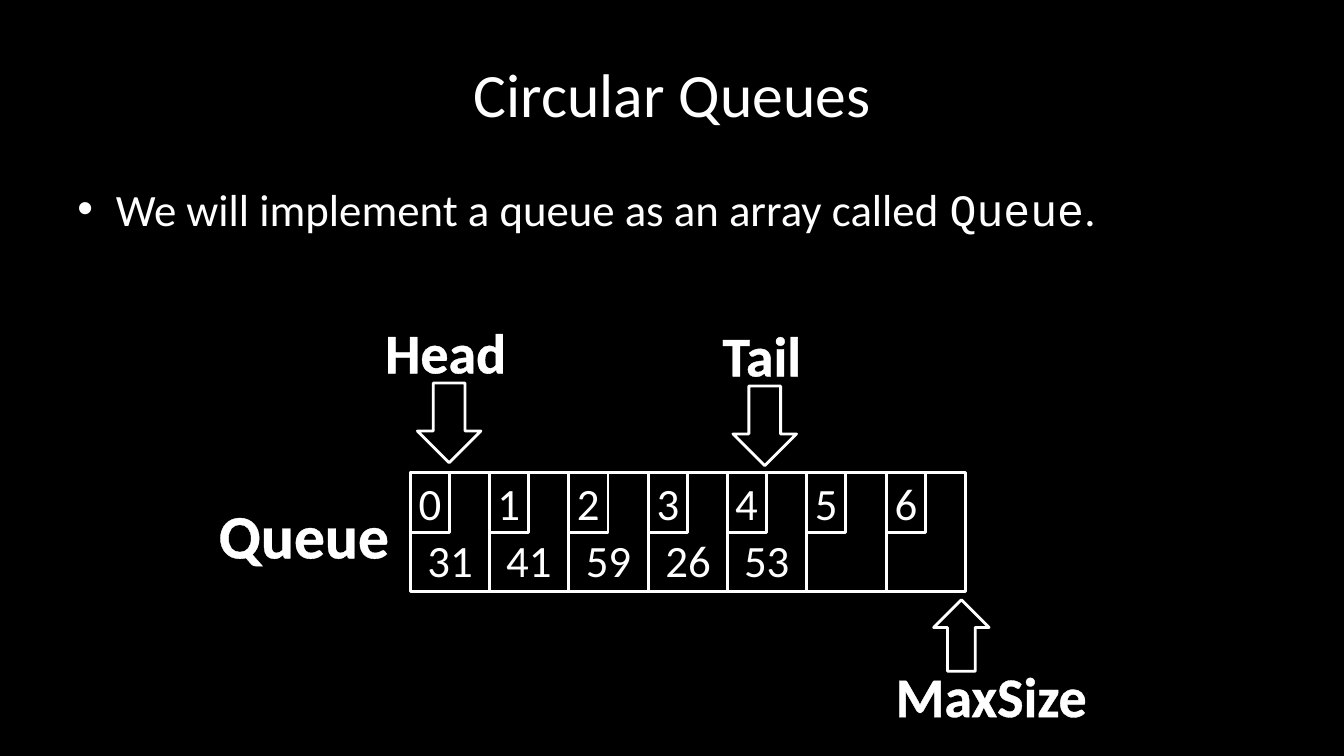
import pptx
import pptx.dml.color
import pptx.enum.shapes
import pptx.enum.text
import pptx.oxml
import pptx.oxml.ns
import pptx.util

PX = 9144
COLORS = {"background": "000000", "ink": "FFFFFF"}
SHAPE = pptx.enum.shapes.MSO_SHAPE
ANCHOR = pptx.enum.text.MSO_ANCHOR
ALIGN = pptx.enum.text.PP_ALIGN
NS = pptx.oxml.ns.nsdecls("a")

VALUES = ["31", "41", "59", "26", "53", "", ""]
ROW_LEFT, ROW_TOP, ROW_WIDTH = 407, 469, 551
CELL_WIDTH, CELL_HEIGHT = 79, 118
INDEX_WIDTH, INDEX_HEIGHT = 39, 59


def rgb(name):
    return pptx.dml.color.RGBColor.from_string(COLORS[name])


def px(*lengths):
    return [pptx.util.Emu(n * PX) for n in lengths]


def style_run(r, size, font="Calibri", bold=False):
    r.font.size = pptx.util.Pt(size)
    r.font.name = font
    r.font.bold = bold
    r.font.color.rgb = rgb("ink")


def add_text(s, box, text, size, bold=False):
    tf = s.shapes.add_textbox(*px(*box)).text_frame
    tf.word_wrap = True
    tf.text = text
    p = tf.paragraphs[0]
    p.alignment = ALIGN.CENTER
    style_run(p.runs[0], size, bold=bold)
    return tf


def add_title(s, box, text):
    add_text(s, box, text, 44).vertical_anchor = ANCHOR.MIDDLE


def add_bullet(s, box, parts):
    tf = s.shapes.add_textbox(*px(*box)).text_frame
    tf.word_wrap = True
    p = tf.paragraphs[0]
    pPr = p._p.get_or_add_pPr()
    indent = px(38)[0]
    pPr.set("marL", str(indent))
    pPr.set("indent", str(-indent))
    pPr.append(pptx.oxml.parse_xml(f'<a:buFont {NS} typeface="Arial"/>'))
    pPr.append(pptx.oxml.parse_xml(f'<a:buChar {NS} char="•"/>'))
    for text, font in parts:
        r = p.add_run()
        r.text = text
        style_run(r, 32, font)


def add_label(s, box, text, size):
    tf = add_text(s, box, text, size, bold=True)
    tf.word_wrap = False
    tf.auto_size = pptx.enum.text.MSO_AUTO_SIZE.SHAPE_TO_FIT_TEXT
    outline = pptx.oxml.parse_xml(
        f'<a:ln {NS} w="17780"><a:solidFill><a:srgbClr val="{COLORS["ink"]}"/>'
        "</a:solidFill></a:ln>")
    tf.paragraphs[0].runs[0].font._element.insert(0, outline)


def add_outlined(s, kind, box):
    sp = s.shapes.add_shape(kind, *px(*box))
    sp.shadow.inherit = False
    sp.fill.background()
    sp.line.color.rgb = rgb("ink")
    sp.line.width = pptx.util.Pt(2)
    return sp


def add_arrow(s, kind, box):
    sp = add_outlined(s, kind, box)
    sp.fill.solid()
    sp.fill.fore_color.rgb = rgb("background")


def add_cell(s, box, text, anchor):
    tf = add_outlined(s, SHAPE.RECTANGLE, box).text_frame
    if not text:
        return
    tf.margin_left = tf.margin_right = 0
    tf.vertical_anchor = anchor
    tf.text = text
    p = tf.paragraphs[0]
    p.alignment = ALIGN.CENTER
    style_run(p.runs[0], 32)


def add_queue(s):
    lefts = [ROW_LEFT + ROW_WIDTH * i // len(VALUES) for i in range(len(VALUES))]
    for left, value in zip(lefts, VALUES):
        add_cell(s, (left, ROW_TOP, CELL_WIDTH, CELL_HEIGHT), value, ANCHOR.BOTTOM)
    for i, left in enumerate(lefts):
        add_cell(s, (left, ROW_TOP, INDEX_WIDTH, INDEX_HEIGHT), str(i), ANCHOR.MIDDLE)


def main():
    prs = pptx.Presentation()
    prs.slide_width, prs.slide_height = px(1333, 750)
    s = prs.slides.add_slide(prs.slide_layouts[6])
    s.background.fill.solid()
    s.background.fill.fore_color.rgb = rgb("background")

    add_title(s, (67, 30, 1200, 125), "Circular Queues")
    add_bullet(s, (67, 175, 1200, 495), [
        ("We will implement a queue as an array called ", "Calibri"),
        ("Queue", "Courier New"),
        (".", "Calibri"),
    ])
    add_queue(s)

    add_label(s, (206, 488, 191, 84), "Queue", 44)
    add_label(s, (877, 651, 212, 77), "MaxSize", 40)
    add_arrow(s, SHAPE.UP_ARROW, (926, 595, 55, 71))
    add_label(s, (371, 310, 142, 77), "Head", 40)
    add_arrow(s, SHAPE.DOWN_ARROW, (414, 380, 63, 79))
    add_label(s, (706, 313, 99, 77), "Tail", 40)
    add_arrow(s, SHAPE.DOWN_ARROW, (727, 383, 63, 79))
    prs.save("out.pptx")


if __name__ == "__main__":
    main()
